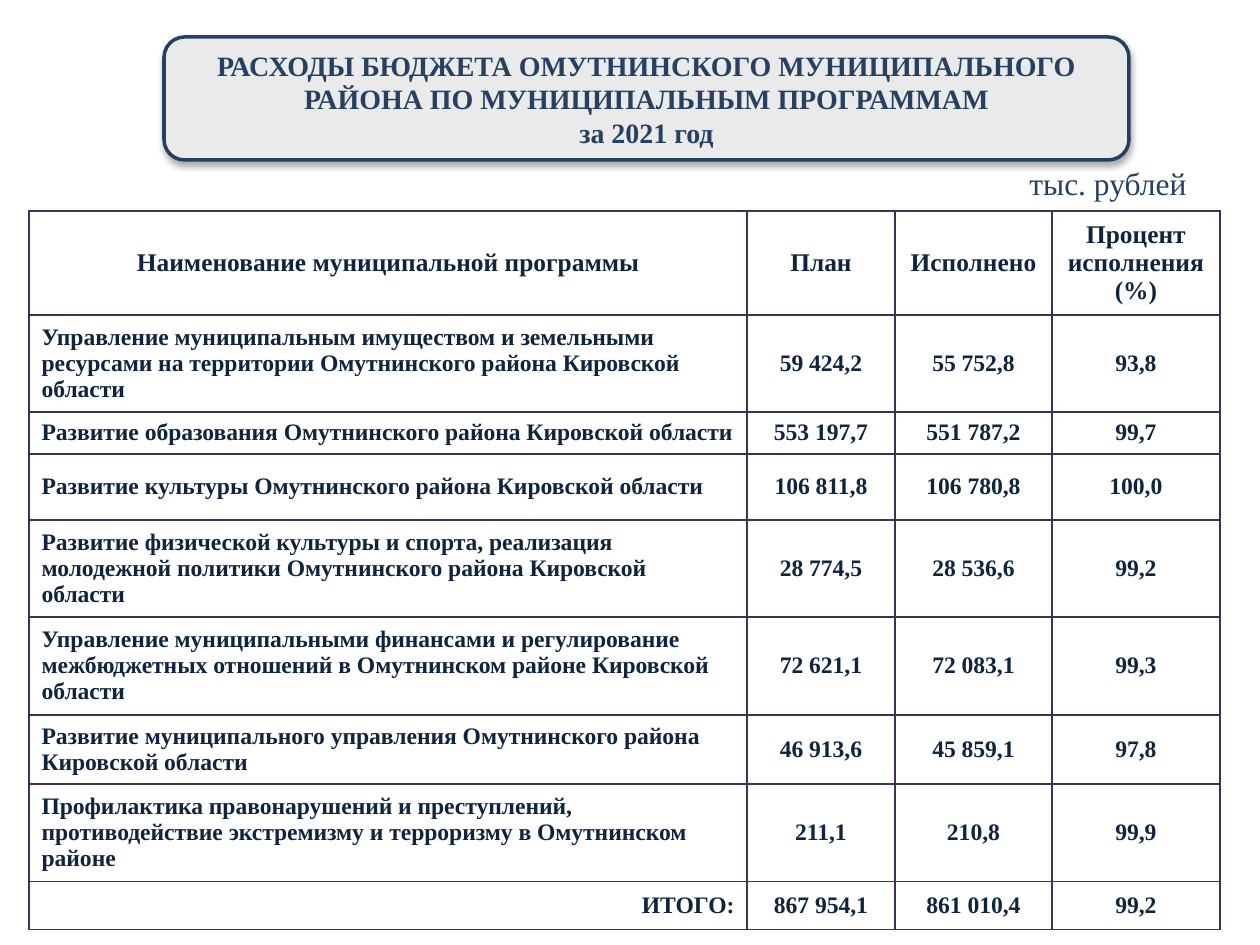
from lxml import etree
from pptx import Presentation
from pptx import util as u
from pptx.dml.color import RGBColor
from pptx.enum import shapes, text
from pptx.oxml import parse_xml
from pptx.oxml.ns import nsdecls, qn

PX = u.Inches(1) / 126
FONT = "Times New Roman"
NAVY = RGBColor(0x25, 0x40, 0x61)
INK = RGBColor(0x0F, 0x24, 0x3E)
PLUM = RGBColor(0x40, 0x31, 0x52)
GRAY = RGBColor(0xEA, 0xEA, 0xEA)
WHITE = RGBColor(0xFF, 0xFF, 0xFF)
LEFT, MID, RIGHT = (text.PP_ALIGN.LEFT, text.PP_ALIGN.CENTER,
                    text.PP_ALIGN.RIGHT)

HEAD = ["Наименование муниципальной программы", "План", "Исполнено",
        "Процент исполнения (%)"]
ROWS = [
    ["Управление муниципальным имуществом и земельными ресурсами на "
     "территории Омутнинского района Кировской области",
     "59 424,2", "55 752,8", "93,8"],
    ["Развитие образования Омутнинского района Кировской области",
     "553 197,7", "551 787,2", "99,7"],
    ["Развитие культуры Омутнинского района Кировской области",
     "106 811,8", "106 780,8", "100,0"],
    ["Развитие физической культуры и спорта, реализация молодежной "
     "политики Омутнинского района Кировской области",
     "28 774,5", "28 536,6", "99,2"],
    ["Управление муниципальными финансами и регулирование межбюджетных "
     "отношений в Омутнинском районе Кировской области",
     "72 621,1", "72 083,1", "99,3"],
    ["Развитие муниципального управления Омутнинского района Кировской "
     "области", "46 913,6", "45 859,1", "97,8"],
    ["Профилактика правонарушений и преступлений, противодействие "
     "экстремизму и терроризму в Омутнинском районе",
     "211,1", "210,8", "99,9"],
    ["ИТОГО:", "867 954,1", "861 010,4", "99,2"],
]
WIDE = [718, 148, 157, 168]
HIGH = [104, 97, 42, 66, 97, 98, 69, 98, 48]


def px(*vals):
    return [u.Emu(round(v * PX)) for v in vals]


def write(frame, words, size=13.5, color=INK, bold=True, align=MID):
    frame.word_wrap = True
    para = frame.paragraphs[0]
    para.text = words
    para.alignment = align
    for run in para.runs:
        font = run.font
        font.name, font.size, font.bold = FONT, u.Pt(size), bold
        font.color.rgb = color


class Deck:
    def __init__(self):
        self.prs = Presentation()
        self.prs.slide_width, self.prs.slide_height = px(1260, 945)
        self.slide = self.prs.slides.add_slide(self.prs.slide_layouts[6])

    def note(self, words, box, **style):
        area = self.slide.shapes.add_textbox(*px(*box))
        write(area.text_frame, words, **style)

    def banner(self, words, box, **style):
        shape = self.slide.shapes.add_shape(
            shapes.MSO_SHAPE.ROUNDED_RECTANGLE, *px(*box))
        shape.fill.solid()
        shape.fill.fore_color.rgb = GRAY
        shape.line.color.rgb = NAVY
        shape.line.width = u.Pt(2)
        shape.shadow.inherit = False
        # Soft shadow straight below
        glow = shape._element.spPr.find(qn("a:effectLst"))
        glow.append(parse_xml(
            f'<a:outerShdw {nsdecls("a")} blurRad="{u.Pt(3.5)}" '
            f'dist="{u.Pt(2.2)}" dir="5400000" rotWithShape="0">'
            '<a:srgbClr val="000000"><a:alpha val="32000"/></a:srgbClr>'
            '</a:outerShdw>'))
        shape.text_frame.vertical_anchor = text.MSO_ANCHOR.MIDDLE
        write(shape.text_frame, words, **style)

    def edge(self, cell):
        props = cell._tc.get_or_add_tcPr()
        for i, side in enumerate(("lnL", "lnR", "lnT", "lnB")):
            props.insert(i, parse_xml(
                f'<a:{side} {nsdecls("a")} w="{u.Pt(1)}"><a:solidFill>'
                f'<a:srgbClr val="{PLUM}"/></a:solidFill></a:{side}>'))

    def table(self, rows, left, top):
        grid = self.slide.shapes.add_table(
            len(rows), len(WIDE), *px(left, top, sum(WIDE), sum(HIGH))).table
        grid.first_row = grid.horz_banding = False
        for col, size in zip(grid.columns, px(*WIDE)):
            col.width = size
        for row, size in zip(grid.rows, px(*HIGH)):
            row.height = size
        last = len(rows) - 1
        for r, row in enumerate(rows):
            for c, words in enumerate(row):
                cell = grid.cell(r, c)
                cell.vertical_anchor = text.MSO_ANCHOR.MIDDLE
                cell.fill.solid()
                cell.fill.fore_color.rgb = WHITE
                self.edge(cell)
                align = MID
                if c == 0 and r > 0:
                    align = RIGHT if r == last else LEFT
                write(cell.text_frame, words, align=align,
                      size=13.5 if r else 14.5)


def main():
    deck = Deck()
    # Programme spending table
    deck.table([HEAD] + ROWS, 29, 211)
    # Unit of measure
    deck.note("тыс. рублей", (1017, 158, 223, 50), size=18, color=NAVY,
              bold=False, align=LEFT)
    # Heading
    deck.banner("РАСХОДЫ БЮДЖЕТА ОМУТНИНСКОГО МУНИЦИПАЛЬНОГО РАЙОНА "
                "ПО МУНИЦИПАЛЬНЫМ ПРОГРАММАМ\vза 2021 год",
                (164, 37, 965, 123), size=16, color=NAVY)
    deck.prs.save("out.pptx")


if __name__ == "__main__":
    main()
